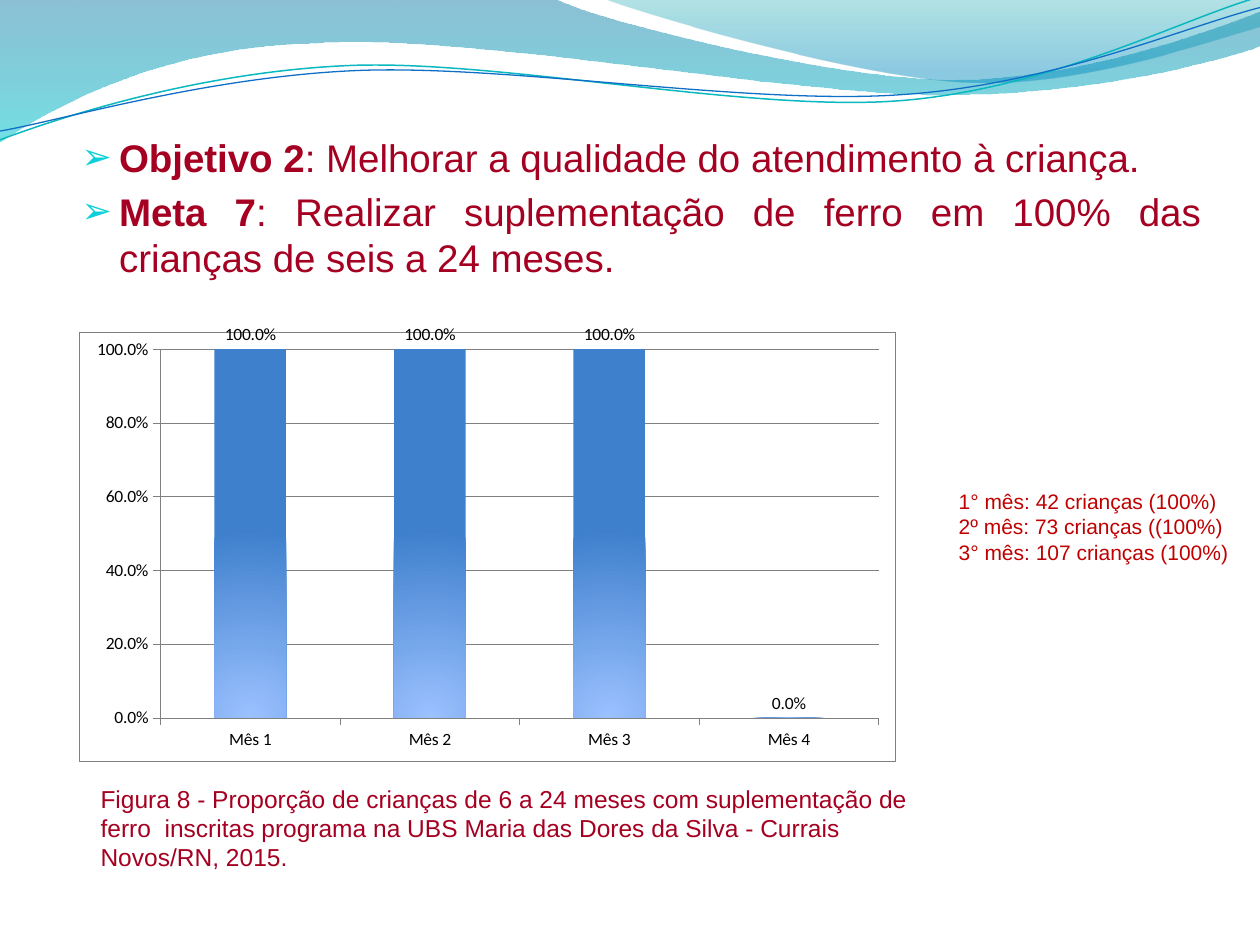
from math import cos, radians, sin

from lxml.etree import SubElement
from pptx import Presentation
from pptx.chart.data import CategoryChartData
from pptx.dml.color import RGBColor
from pptx.enum.chart import XL_CHART_TYPE, XL_LABEL_POSITION, XL_TICK_MARK
from pptx.enum.text import MSO_AUTO_SIZE, PP_ALIGN
from pptx.oxml import parse_xml
from pptx.oxml.ns import nsdecls, qn
from pptx.util import Inches, Pt

WINE = RGBColor(0xA5, 0x00, 0x21)
RED = RGBColor(0xC0, 0x00, 0x00)
BLACK = RGBColor(0, 0, 0)
WHITE = RGBColor(255, 255, 255)
GRAY = RGBColor(0x80, 0x80, 0x80)
TEAL = RGBColor(0x0A, 0xB8, 0xBF)
BLUE = RGBColor(0x0F, 0x6F, 0xC6)
CYAN = RGBColor(0x0B, 0xD0, 0xD9)
DEEP_BLUE = RGBColor(0x00, 0x74, 0xA1)
TURQUOISE = RGBColor(0x00, 0xC6, 0xCF)
SEA_GREEN = RGBColor(0x00, 0xA1, 0xA9)
SKY_BLUE = RGBColor(0x00, 0x8B, 0xBF)
BAR_LIGHT = RGBColor(0x9B, 0xC1, 0xFF)
BAR_DARK = RGBColor(0x3F, 0x80, 0xCD)

DOWNWARD = '<a:lin ang="5400000" scaled="0"/>'
FROM_BASE = '<a:path path="circle"><a:fillToRect l="50000" t="100000" r="50000"/></a:path>'
TILT = 2.7


def turn(point, center):
    """Rotate a point clockwise by the tilt around a center."""
    x, y = point[0] - center[0], point[1] - center[1]
    cosine, sine = cos(radians(TILT)), sin(radians(TILT))
    return center[0] + x * cosine - y * sine, center[1] + x * sine + y * cosine


def set_gradient(properties, stops, direction):
    """Give shape properties a gradient of (position, colour, opacity) stops."""
    for tag in ("a:noFill", "a:solidFill", "a:gradFill"):
        for old in properties.findall(qn(tag)):
            properties.remove(old)
    stop_list = "".join(
        f'<a:gs pos="{position * 1000}"><a:srgbClr val="{color}">'
        f'<a:alpha val="{opacity * 1000}"/></a:srgbClr></a:gs>'
        for position, color, opacity in stops)
    gradient = parse_xml(f'<a:gradFill {nsdecls("a")} rotWithShape="1"><a:gsLst>{stop_list}'
                         f'</a:gsLst>{direction}</a:gradFill>')
    geometry = properties.find(qn("a:custGeom"))
    properties.insert(0 if geometry is None else properties.index(geometry) + 1, gradient)


class SlideBuilder:
    """Draws elements on a slide with a grid of 100 columns and 75 rows."""

    font = "Arial"
    chart_font = "Calibri"

    def __init__(self, presentation):
        self.slide = presentation.slides.add_slide(presentation.slide_layouts[1])
        self.shapes = self.slide.shapes
        title = self.shapes.title.element
        title.getparent().remove(title)
        self.column = presentation.slide_width / 100
        self.row = presentation.slide_height / 75

    def box(self, left, top, width, height):
        return (round(left * self.column), round(top * self.row),
                round(width * self.column), round(height * self.row))

    def outline(self, start, pieces, closed, center=None):
        points = [start]
        for piece in pieces:
            points += zip(piece[::2], piece[1::2])
        if center:
            points = [turn(point, center) for point in points]
        points = [(round(x * self.column), round(y * self.row)) for x, y in points]
        builder = self.shapes.build_freeform(*points[0])
        builder.add_line_segments(points[1:], close=closed)
        shape = builder.convert_to_shape()
        shape.shadow.inherit = False
        segments = iter(list(shape.element.iter(qn("a:lnTo"))))
        for piece in pieces:
            segment = next(segments)
            if len(piece) == 6:
                segment.tag = qn("a:cubicBezTo")
                for _ in range(2):
                    control = next(segments)
                    control.getparent().remove(control)
                    segment.append(control[0])
        return shape

    def wave(self, start, pieces, stops):
        shape = self.outline(start, pieces, True)
        shape.line.fill.background()
        set_gradient(shape.element.spPr, stops, DOWNWARD)

    def ripple(self, start, curves, center, color, width):
        shape = self.outline(start, curves, False, center)
        shape.rotation = 360 - TILT
        shape.fill.background()
        shape.line.color.rgb = color
        shape.line.width = Pt(width)

    def run(self, paragraph, text, size, color, bold=False):
        run = paragraph.add_run()
        run.text = text
        run.font.name = self.font
        run.font.size = Pt(size)
        run.font.bold = bold
        run.font.color.rgb = color

    def text(self, area, lines, size, color, align=PP_ALIGN.LEFT, indent=0):
        frame = self.shapes.add_textbox(*self.box(*area)).text_frame
        frame.word_wrap = True
        frame.auto_size = MSO_AUTO_SIZE.SHAPE_TO_FIT_TEXT
        for index, line in enumerate(lines):
            paragraph = frame.add_paragraph() if index else frame.paragraphs[0]
            paragraph.alignment = align
            paragraph._p.get_or_add_pPr().set("marL", str(Inches(indent)))
            self.run(paragraph, line, size, color)

    def goals(self, area, items):
        body = self.slide.placeholders[1]
        body.left, body.top, body.width, body.height = self.box(*area)
        self.shapes.element.append(body.element)
        frame = body.text_frame
        frame.auto_size = MSO_AUTO_SIZE.NONE
        for index, (label, wording) in enumerate(items):
            paragraph = frame.add_paragraph() if index else frame.paragraphs[0]
            paragraph.alignment = PP_ALIGN.JUSTIFY
            properties = paragraph._p.get_or_add_pPr()
            properties.set("marL", str(Inches(0.3)))
            properties.set("indent", str(-Inches(0.3)))
            space = SubElement(properties, qn("a:spcBef"))
            SubElement(space, qn("a:spcPct"), val="20000")
            bullet_color = SubElement(properties, qn("a:buClr"))
            SubElement(bullet_color, qn("a:srgbClr"), val=str(CYAN))
            SubElement(properties, qn("a:buSzPct"), val="95000")
            SubElement(properties, qn("a:buFont"), typeface=self.font)
            SubElement(properties, qn("a:buChar"), char="➢")
            self.run(paragraph, label, 22, WINE, True)
            self.run(paragraph, wording, 22, WINE)

    def columns(self, area, categories, values):
        data = CategoryChartData(number_format="0.0%")
        data.categories = categories
        data.add_series("Series 1", values)
        chart = self.shapes.add_chart(
            XL_CHART_TYPE.COLUMN_CLUSTERED, *self.box(*area), data).chart
        chart.has_legend = chart.has_title = False
        chart.font.name, chart.font.size = self.chart_font, Pt(10)
        chart.font.color.rgb = BLACK
        value_axis, category_axis = chart.value_axis, chart.category_axis
        value_axis.minimum_scale, value_axis.maximum_scale = 0, 1
        value_axis.major_unit = 0.2
        value_axis.has_major_gridlines = True
        value_axis.tick_labels.number_format = "0.0%"
        value_axis.tick_labels.number_format_is_linked = False
        for axis in (value_axis, category_axis):
            axis.major_tick_mark = XL_TICK_MARK.OUTSIDE
        for styled in (value_axis, category_axis, value_axis.major_gridlines):
            styled.format.line.color.rgb = GRAY
            styled.format.line.width = Pt(0.25)
        plot = chart.plots[0]
        plot.gap_width = 150
        plot.vary_by_categories = False
        plot.has_data_labels = True
        labels = plot.data_labels
        labels.show_value = True
        labels.number_format, labels.number_format_is_linked = "0.0%", False
        labels.position = XL_LABEL_POSITION.OUTSIDE_END
        series = plot.series[0]
        series.format.fill.solid()
        set_gradient(series._element.spPr, [(0, BAR_LIGHT, 100), (100, BAR_DARK, 100)], FROM_BASE)
        self.frame_chart(chart)

    def frame_chart(self, chart):
        plot_area = chart._chartSpace.chart.plotArea
        for old in plot_area.findall(qn("c:layout")):
            plot_area.remove(old)
        places = "".join(f'<c:{name} val="{value}"/>' for name, value in (
            ("layoutTarget", "inner"), ("xMode", "edge"), ("yMode", "edge"),
            ("x", 0.1), ("y", 0.04), ("w", 0.88), ("h", 0.86)))
        plot_area.insert(0, parse_xml(f'<c:layout {nsdecls("c")}><c:manualLayout>{places}'
                                      '</c:manualLayout></c:layout>'))
        fill = f'<a:solidFill><a:srgbClr val="{WHITE}"/></a:solidFill>'
        border = (f'<a:ln w="{Pt(0.25)}"><a:solidFill><a:srgbClr val="{GRAY}"/>'
                  '</a:solidFill></a:ln>')
        opening = f'<c:spPr {nsdecls("c", "a")}>{fill}'
        plot_area.append(parse_xml(f'{opening}</c:spPr>'))
        chart._chartSpace.chart.addnext(parse_xml(f'{opening}{border}</c:spPr>'))


def main():
    presentation = Presentation()
    presentation.slide_width, presentation.slide_height = Inches(10), Inches(7.5)
    builder = SlideBuilder(presentation)
    builder.wave((0, 0), [
        (44, -0.1), (47.6, 1.7, 66.4, 6.3, 75.8, 6.3), (85.3, 6.3, 95.8, 2.6, 100, 0.9),
        (100.1, 3.6), (98.3, 4.4, 87, 7.6, 74.6, 7.5), (62.2, 7.5, 38.2, 2.8, 25.7, 3.4),
        (12.9, 3.6, 4.6, 8.3, -0.1, 11.3)], [(0, DEEP_BLUE, 45), (100, TURQUOISE, 55)])
    builder.wave((47.9, -0.1), [
        (50.9, 1.1, 68.2, 6.2, 76.9, 6.5), (85.6, 6.9, 96.1, 3.2, 100, 2.1), (100, 0)],
        [(0, SEA_GREEN, 30), (80, SKY_BLUE, 45)])
    builder.ripple((0, 11.1), [
        (4.8, 9.3, 15.8, 5.7, 27.7, 5.2), (39.5, 4.7, 59.3, 8.9, 71.3, 8),
        (83.3, 7.1, 93.8, 1.5, 99.8, -0.2)], (49.9, 5.75), TEAL, 0.85)
    builder.ripple((0, 10.4), [
        (4.7, 9.6, 16.4, 6.1, 28.3, 5.6), (40.3, 5.1, 59.7, 8.4, 71.7, 7.5),
        (83.6, 6.7, 94.1, 2.1, 100, 0.6)], (49.95, 5.9), BLUE, 0.75)
    builder.text((74.2, 38.3, 25.8, 7.1), [
        "1° mês: 42 crianças (100%)", "2º mês: 73 crianças ((100%)",
        "3° mês: 107 crianças (100%)"], 12, RED, PP_ALIGN.JUSTIFY, 0.09)
    builder.columns((6.25, 25.8, 64.8, 34.6),
                    [f"Mês {month}" for month in range(1, 5)], (1, 1, 1, 0))
    builder.goals((5.45, 10.15, 90.9, 6), [
        ("Objetivo 2", ": Melhorar a qualidade do atendimento à criança."),
        ("Meta 7", ": Realizar suplementação de ferro em 100% das crianças de seis a 24 meses.")])
    builder.text((7, 61.7, 68.4, 8.1), [
        "Figura 8 - Proporção de crianças de 6 a 24 meses com suplementação de ferro  inscritas "
        "programa na UBS Maria das Dores da Silva - Currais Novos/RN, 2015."], 14, WINE)
    presentation.save("out.pptx")


if __name__ == "__main__":
    main()
